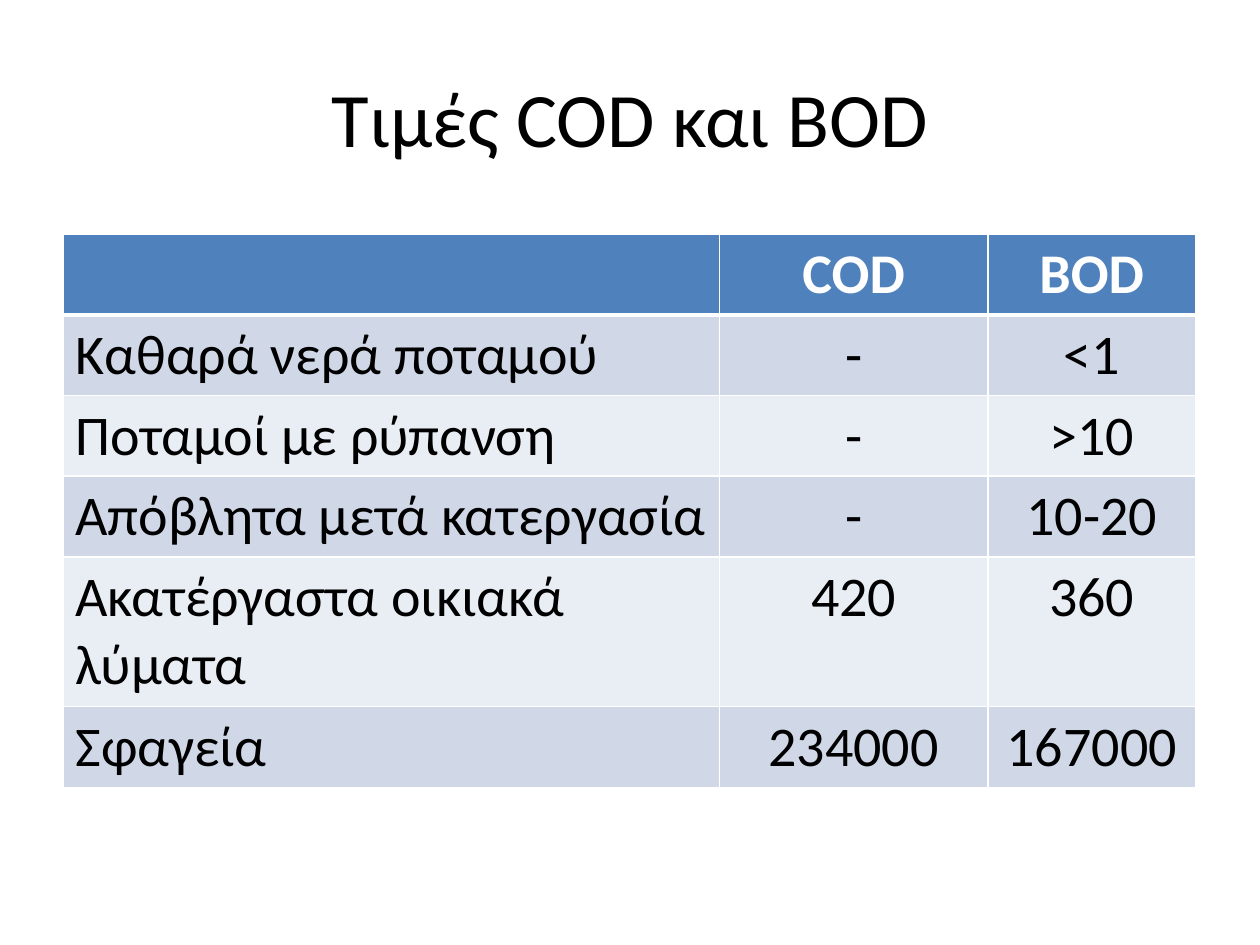
import pptx
import pptx.util
import pptx.dml.color
import pptx.enum.text
import pptx.oxml
import pptx.oxml.ns

Inches = pptx.util.Inches
ALIGN = pptx.enum.text.PP_ALIGN
MIDDLE = pptx.enum.text.MSO_ANCHOR.MIDDLE

COLORS = {
    "ink": "000000",
    "paper": "FFFFFF",
    "head": "4F81BD",
    "dark": "D0D8E8",
    "light": "E9EDF4",
}

ROWS = [
    ("", "COD", "BOD"),
    ("Καθαρά νερά ποταμού", "-", "<1"),
    ("Ποταμοί με ρύπανση", "-", ">10"),
    ("Απόβλητα μετά κατεργασία", "-", "10-20"),
    ("Ακατέργαστα οικιακά λύματα", "420", "360"),
    ("Σφαγεία", "234000", "167000"),
]
WIDTHS = [5.21, 2.13, 1.65]
HEIGHTS = [0.64, 0.64, 0.64, 0.64, 1.19, 0.64]


def color(name):
    return pptx.dml.color.RGBColor.from_string(COLORS[name])


def write(frame, text, font="Calibri", size=32, ink="ink", bold=False, align=ALIGN.LEFT):
    para = frame.paragraphs[0]
    para.alignment = align
    run = para.add_run()
    run.text = text
    run.font.name = font
    run.font.size = pptx.util.Pt(size)
    run.font.bold = bold
    run.font.color.rgb = color(ink)


class Deck:
    def __init__(self, width, height, font):
        self.show = pptx.Presentation()
        self.show.slide_width = Inches(width)
        self.show.slide_height = Inches(height)
        self.font = font
        self.slide = self.show.slides.add_slide(self.show.slide_layouts[6])

    def title(self, text, left, top, width, height):
        box = self.slide.shapes.add_textbox(
            Inches(left), Inches(top), Inches(width), Inches(height))
        frame = box.text_frame
        frame.word_wrap = True
        frame.vertical_anchor = MIDDLE
        write(frame, text, font=self.font, size=44, align=ALIGN.CENTER)

    def border(self, cell, side, width):
        line = pptx.oxml.parse_xml(
            f'<a:ln{side} {pptx.oxml.ns.nsdecls("a")} w="{pptx.util.Pt(width)}">'
            f'<a:solidFill><a:srgbClr val="{COLORS["paper"]}"/></a:solidFill></a:ln{side}>')
        cell._tc.get_or_add_tcPr().append(line)

    def cell(self, cell, text, row, col):
        head = row == 0
        edges = {"L": 1, "R": 1, "T": 3 if row == 1 else 1, "B": 3 if head else 1}
        for side, width in edges.items():
            self.border(cell, side, width)
        cell.fill.solid()
        cell.fill.fore_color.rgb = color("head" if head else "dark" if row % 2 else "light")
        if text:
            write(cell.text_frame, text, font=self.font, bold=head,
                  ink="paper" if head else "ink",
                  align=ALIGN.CENTER if col else ALIGN.LEFT)

    def table(self, rows, left, top, widths, heights):
        table = self.slide.shapes.add_table(
            len(rows), len(widths), Inches(left), Inches(top),
            Inches(sum(widths)), Inches(sum(heights))).table
        for column, width in zip(table.columns, widths):
            column.width = Inches(width)
        for line, height in zip(table.rows, heights):
            line.height = Inches(height)
        for row, texts in enumerate(rows):
            for col, text in enumerate(texts):
                self.cell(table.cell(row, col), text, row, col)


def main():
    deck = Deck(10, 7.5, "Calibri")
    deck.title("Τιμές COD και BOD", 0.5, 0.3, 9, 1.25)
    deck.table(ROWS, 0.5, 1.86, WIDTHS, HEIGHTS)
    deck.show.save("out.pptx")


if __name__ == "__main__":
    main()
